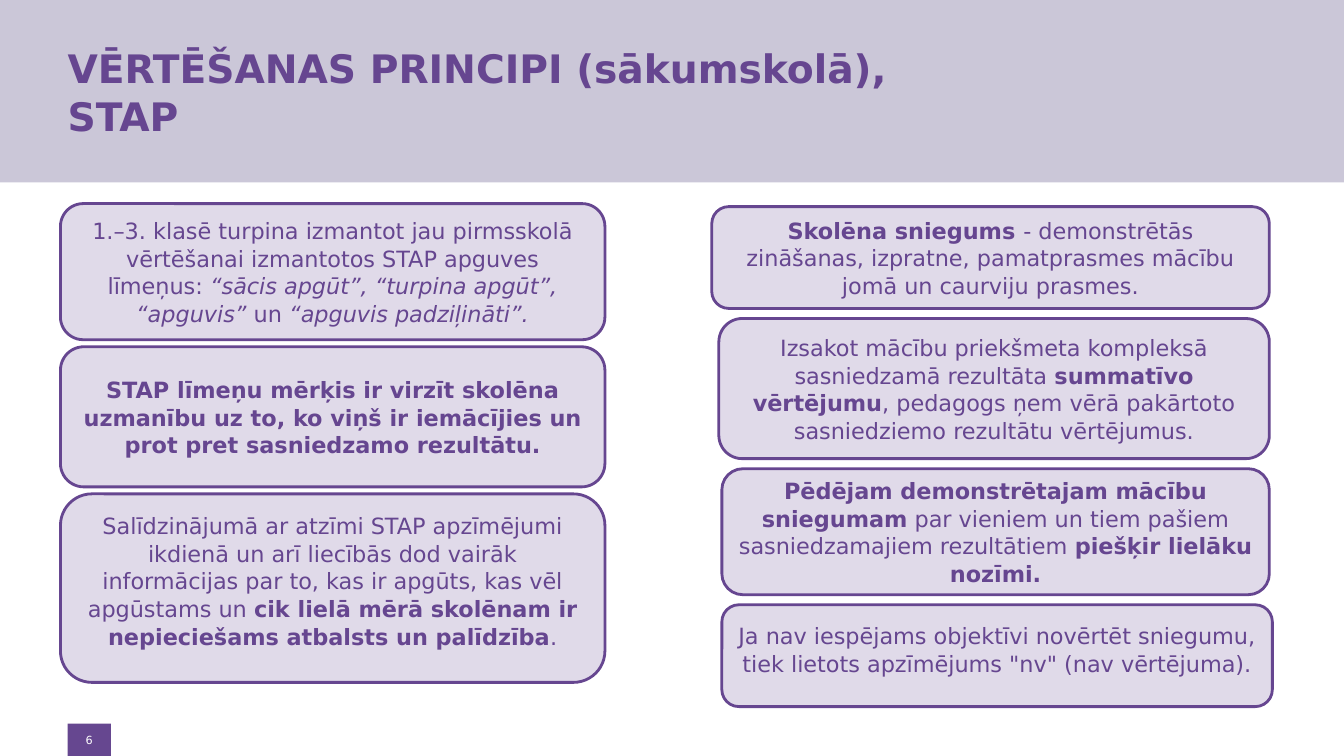
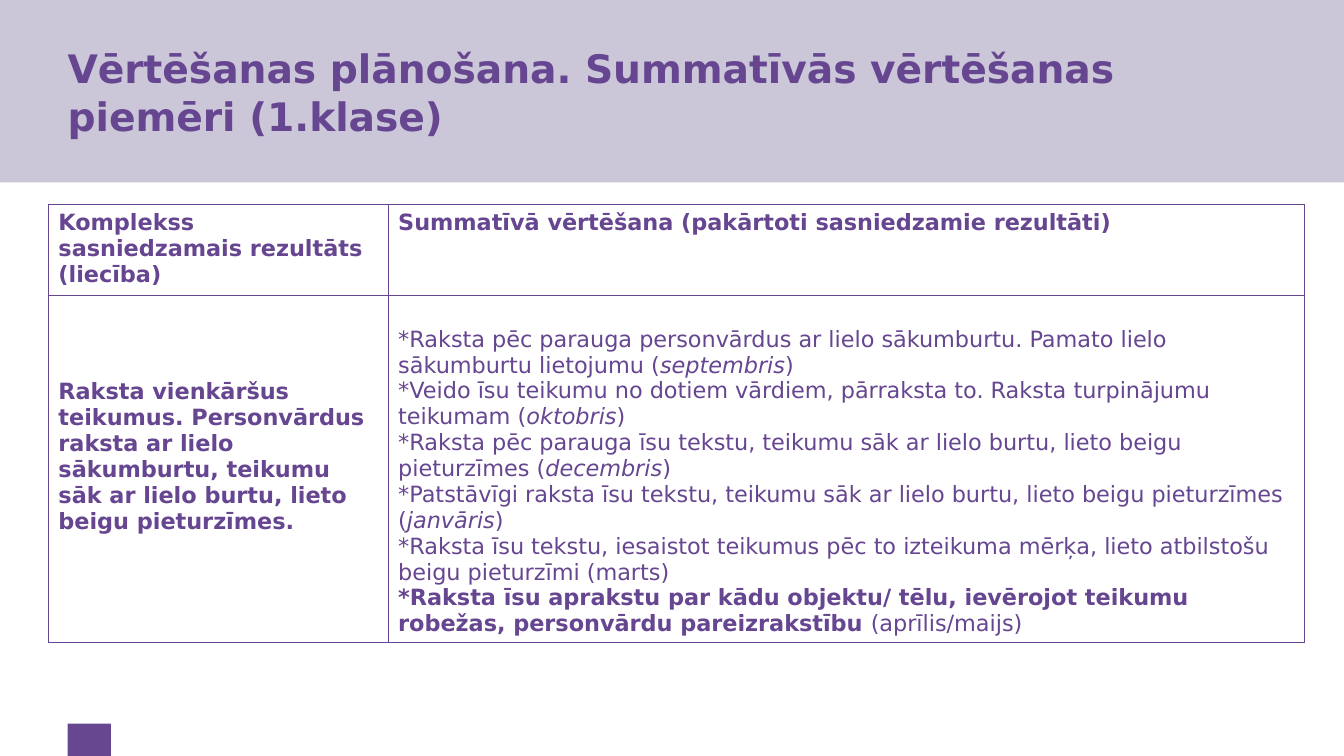
from dataclasses import dataclass

from lxml import etree
from pptx import Presentation
from pptx.dml.color import RGBColor
from pptx.enum.shapes import MSO_SHAPE
from pptx.enum.text import MSO_ANCHOR, PP_ALIGN
from pptx.oxml.ns import qn
from pptx.util import Inches, Pt

RECTANGLE = MSO_SHAPE.RECTANGLE
ROUNDED = MSO_SHAPE.ROUNDED_RECTANGLE
MIDDLE = MSO_ANCHOR.MIDDLE
TOP = MSO_ANCHOR.TOP
CENTER = PP_ALIGN.CENTER
LEFT = PP_ALIGN.LEFT
TITLE_ONLY = 5


@dataclass(frozen=True)
class Theme:
    font: str = "DejaVu Sans"
    purple: RGBColor = RGBColor(0x66, 0x46, 0x90)
    marker: RGBColor = RGBColor(0x66, 0x47, 0x90)
    band: RGBColor = RGBColor(0xCB, 0xC7, 0xD8)
    card: RGBColor = RGBColor(0xE0, 0xDA, 0xE9)
    white: RGBColor = RGBColor(0xFF, 0xFF, 0xFF)
    title_size: int = 28
    body_size: int = 16
    number_size: int = 8
    line_spacing: float = 1.03


THEME = Theme()
BAND_HEIGHT = 1.81
MARKER_BOX = (0.67, 7.18, 0.43, 0.32)

# Each text run is (text, style): "b" bold, "i" italic, "" regular.
# Each card is (left, width, height, extra space under the text, runs).
LEFT_CARDS = [
    (0.6, 5.4, 1.35, 0, [
        ("1.–3. klasē turpina izmantot jau pirmsskolā vērtēšanai izmantotos "
         "STAP apguves līmeņus: ", ""),
        ("“sācis apgūt”, “turpina apgūt”, “apguvis”", "i"),
        (" un ", ""),
        ("“apguvis padziļināti”.", "i")]),
    (0.6, 5.4, 1.39, 0, [
        ("STAP līmeņu mērķis ir virzīt skolēna uzmanību uz to, ko viņš ir "
         "iemācījies un prot pret sasniedzamo rezultātu.", "b")]),
    (0.6, 5.4, 1.87, 0.15, [
        ("Salīdzinājumā ar atzīmi STAP apzīmējumi ikdienā un arī liecībās dod "
         "vairāk informācijas par to, kas ir apgūts, kas vēl apgūstams un ", ""),
        ("cik lielā mērā skolēnam ir nepieciešams atbalsts un palīdzība", "b"),
        (".", "")]),
]
RIGHT_CARDS = [
    (7.06, 5.53, 1.01, 0, [
        ("Skolēna sniegums ", "b"),
        ("- demonstrētās zināšanas, izpratne, pamatprasmes mācību jomā un "
         "caurviju prasmes.", "")]),
    (7.13, 5.46, 1.39, 0, [
        ("Izsakot mācību priekšmeta kompleksā sasniedzamā rezultāta ", ""),
        ("summatīvo vērtējumu", "b"),
        (", pedagogs ņem vērā pakārtoto sasniedziemo rezultātu vērtējumus.", "")]),
    (7.16, 5.43, 1.25, 0, [
        ("Pēdējam demonstrētajam mācību sniegumam", "b"),
        (" par vieniem un tiem pašiem sasniedzamajiem rezultātiem ", ""),
        ("piešķir lielāku nozīmi.", "b")]),
    (7.16, 5.46, 1.01, 0.13, [
        ("Ja nav iespējams objektīvi novērtēt sniegumu, tiek lietots "
         "apzīmējums \"nv\" (nav vērtējuma).", "")]),
]

COLUMN_WIDTHS = (3.37, 9.09)
ROW_HEIGHTS = (0.9, 3.44)


def dated(task, month):
    """Return the runs of a task followed by its month in italics."""
    return [(f"{task} (", ""), (month, "i"), (")", "")]


# Each cell is (top margin, paragraphs).
PLAN_ROWS = [
    [
        (0.05, [[("Komplekss sasniedzamais rezultāts (liecība)", "b")]]),
        (0.05, [[("Summatīvā vērtēšana (pakārtoti sasniedzamie rezultāti)", "b")]]),
    ],
    [
        (0.83, [[("Raksta vienkāršus teikumus. Personvārdus raksta ar lielo "
                  "sākumburtu, teikumu sāk ar lielo burtu, lieto beigu "
                  "pieturzīmes.", "b")]]),
        (0.31, [
            dated("*Raksta pēc parauga personvārdus ar lielo sākumburtu. "
                  "Pamato lielo sākumburtu lietojumu", "septembris"),
            dated("*Veido īsu teikumu no dotiem vārdiem, pārraksta to. "
                  "Raksta turpinājumu teikumam", "oktobris"),
            dated("*Raksta pēc parauga īsu tekstu, teikumu sāk ar lielo burtu, "
                  "lieto beigu pieturzīmes", "decembris"),
            dated("*Patstāvīgi raksta īsu tekstu, teikumu sāk ar lielo burtu, "
                  "lieto beigu pieturzīmes", "janvāris"),
            [("*Raksta īsu tekstu, iesaistot teikumus pēc to izteikuma mērķa, "
              "lieto atbilstošu beigu pieturzīmi (marts)", "")],
            [("*Raksta īsu aprakstu par kādu objektu/ tēlu, ievērojot teikumu "
              "robežas, personvārdu pareizrakstību ", "b"),
             ("(aprīlis/maijs)", "")],
        ]),
    ],
]


def style_font(font, size, color, bold=None):
    font.name = THEME.font
    font.size = Pt(size)
    font.color.rgb = color
    font.bold = bold


def write_runs(paragraph, runs):
    style_font(paragraph.font, THEME.body_size, THEME.purple)
    for text, style in runs:
        run = paragraph.add_run()
        run.text = text
        run.font.bold = style == "b"
        run.font.italic = style == "i"


def add_block(slide, preset, box, fill):
    block = slide.shapes.add_shape(preset, *map(Inches, box))
    block.shadow.inherit = False
    block.fill.solid()
    block.fill.fore_color.rgb = fill
    block.line.fill.background()
    return block


def move_to_layout(block, layout):
    """Put a block behind the placeholders of the layout."""
    layout.shapes._spTree.insert(2, block._element)


def add_titled_slide(prs, title, width):
    slide = prs.slides.add_slide(prs.slide_layouts[TITLE_ONLY])
    heading = slide.shapes.title
    heading.left, heading.top = Inches(0.67), Inches(0.28)
    heading.width, heading.height = Inches(width), Inches(1.25)
    frame = heading.text_frame
    frame.text = title
    frame.word_wrap = True
    frame.margin_left = 0
    frame.vertical_anchor = MIDDLE
    paragraph = frame.paragraphs[0]
    paragraph.alignment = LEFT
    paragraph.line_spacing = THEME.line_spacing
    style_font(paragraph.font, THEME.title_size, THEME.purple, bold=True)
    return slide


def add_page_number(slide, number):
    frame = slide.shapes.add_textbox(*map(Inches, MARKER_BOX)).text_frame
    frame.margin_left = frame.margin_right = Inches(0.04)
    frame.margin_top = frame.margin_bottom = Inches(0.04)
    frame.word_wrap = True
    frame.vertical_anchor = MIDDLE
    paragraph = frame.paragraphs[0]
    paragraph.text = str(number)
    paragraph.alignment = CENTER
    style_font(paragraph.font, THEME.number_size, THEME.white)


def add_card_stack(slide, cards, top, gap):
    for left, width, height, space_below, runs in cards:
        card = add_block(slide, ROUNDED, (left, top, width, height), THEME.card)
        card.line.color.rgb = THEME.purple
        card.line.width = Pt(2)
        frame = card.text_frame
        frame.word_wrap = True
        frame.vertical_anchor = MIDDLE
        frame.margin_bottom = Inches(0.05 + space_below)
        paragraph = frame.paragraphs[0]
        paragraph.alignment = CENTER
        paragraph.line_spacing = THEME.line_spacing
        write_runs(paragraph, runs)
        top += height + gap


def set_borders(cell):
    properties = cell._tc.get_or_add_tcPr()
    for index, side in enumerate(("a:lnL", "a:lnR", "a:lnT", "a:lnB")):
        border = etree.Element(qn(side), w=str(Pt(1)))
        fill = etree.SubElement(border, qn("a:solidFill"))
        etree.SubElement(fill, qn("a:srgbClr"), val=str(THEME.purple))
        properties.insert(index, border)


def fill_cell(cell, margin_top, paragraphs):
    cell.fill.background()
    set_borders(cell)
    cell.vertical_anchor = TOP
    cell.margin_top = Inches(margin_top)
    frame = cell.text_frame
    for index, runs in enumerate(paragraphs):
        paragraph = frame.add_paragraph() if index else frame.paragraphs[0]
        write_runs(paragraph, runs)


def add_plan_table(slide):
    table = slide.shapes.add_table(
        len(ROW_HEIGHTS), len(COLUMN_WIDTHS), Inches(0.48), Inches(2.03),
        Inches(sum(COLUMN_WIDTHS)), Inches(sum(ROW_HEIGHTS))).table
    table.first_row = table.horz_banding = False
    for column, width in zip(table.columns, COLUMN_WIDTHS):
        column.width = Inches(width)
    for row, height, contents in zip(table.rows, ROW_HEIGHTS, PLAN_ROWS):
        row.height = Inches(height)
        for cell, (margin_top, paragraphs) in zip(row.cells, contents):
            fill_cell(cell, margin_top, paragraphs)


def main():
    prs = Presentation()
    prs.slide_width, prs.slide_height = Inches(13.33), Inches(7.5)

    principles = add_titled_slide(
        prs, "VĒRTĒŠANAS PRINCIPI (sākumskolā), STAP", 8.74)
    for box, fill in (((0, 0, 13.33, BAND_HEIGHT), THEME.band),
                      (MARKER_BOX, THEME.marker)):
        move_to_layout(add_block(principles, RECTANGLE, box, fill),
                       principles.slide_layout)
    add_page_number(principles, 6)
    add_card_stack(principles, LEFT_CARDS, top=2.02, gap=0.07)
    add_card_stack(principles, RIGHT_CARDS, top=2.05, gap=0.1)

    planning = add_titled_slide(
        prs, "Vērtēšanas plānošana. Summatīvās vērtēšanas piemēri (1.klase)", 11.83)
    add_plan_table(planning)

    prs.save("out.pptx")


if __name__ == "__main__":
    main()
